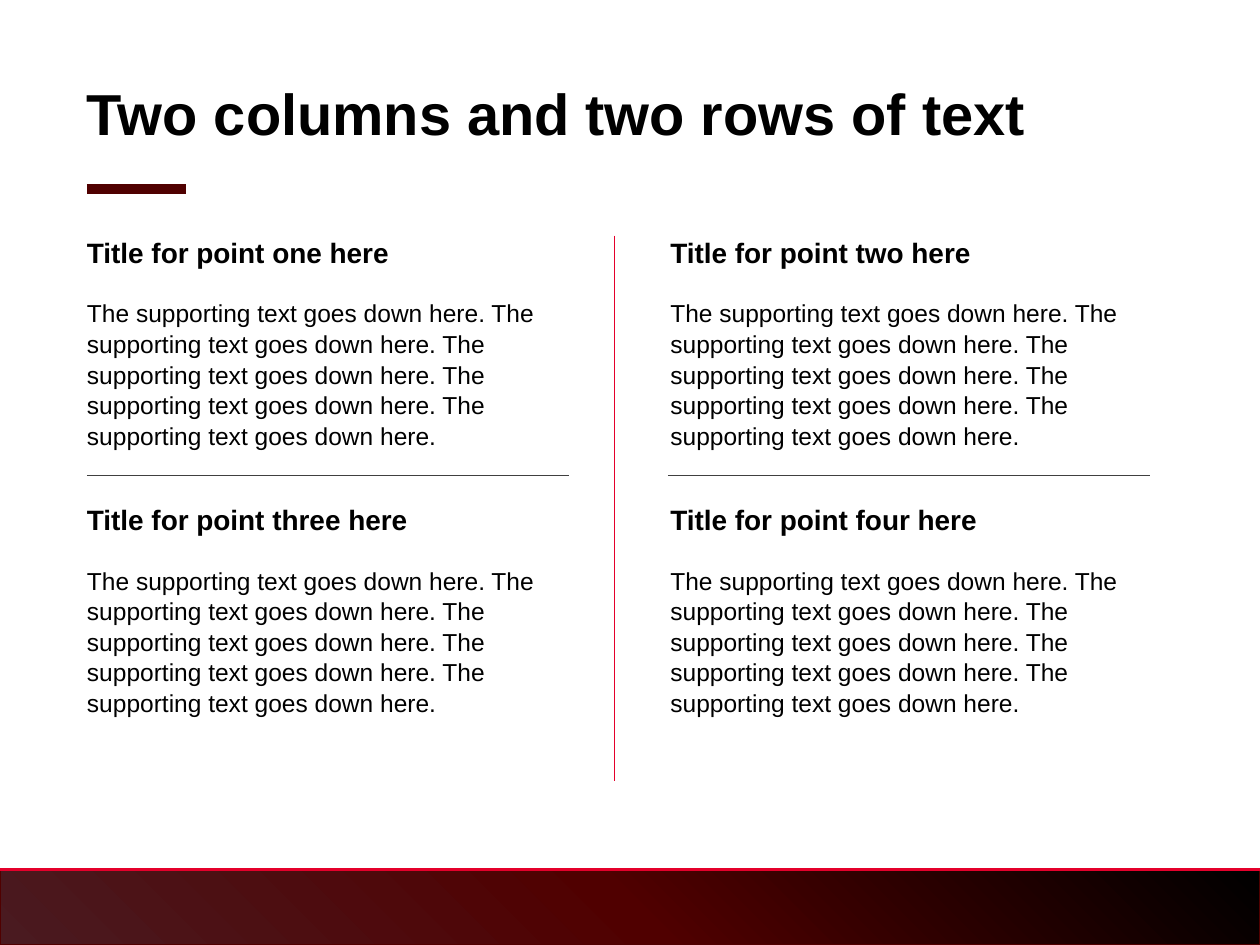
from pptx import Presentation
from pptx import util as u
from pptx.dml.color import RGBColor
from pptx.enum import shapes, text
from pptx.oxml import parse_xml
from pptx.oxml.ns import nsdecls
from lxml import etree

COLORS = {"ink": "000000", "maroon": "500000", "plum": "4A1A20", "red": "E4002B", "rule": "404040"}
TITLE = "Two columns and two rows of text"
SUPPORT = " ".join(["The supporting text goes down here."] * 5)
POINTS = [
    ["Title for point one here", "Title for point two here"],
    ["Title for point three here", "Title for point four here"],
]
FOOTER_STOPS = [(0, "ink"), (50, "maroon"), (100, "plum")]
LEFT, TOP = 0.69, 1.87
COLUMN_STEP, ROW_STEP = 4.63, 2.12
COLUMN_WIDTH = 4.02
RULES = [
    (LEFT, 1.5, 1.48, 1.5, "maroon", 6),
    (0, 6.9, 10, 6.9, "red", 1.5),
    (LEFT, 3.77, 4.52, 3.77, "rule", 0.5),
    (5.3, 3.77, 9.13, 3.77, "rule", 0.5),
    (4.88, TOP, 4.88, 6.2, "red", 0.5),
]


def rgb(name):
    return RGBColor.from_string(COLORS[name])


def write(holder, words, size, bold=False, spacing=1.0):
    frame = holder.text_frame
    frame.word_wrap = True
    frame.auto_size = text.MSO_AUTO_SIZE.NONE
    frame.vertical_anchor = text.MSO_ANCHOR.TOP
    frame.margin_left = frame.margin_top = frame.margin_right = frame.margin_bottom = 0
    paragraph = frame.paragraphs[0]
    paragraph.text = words
    paragraph.alignment = text.PP_ALIGN.LEFT
    paragraph.line_spacing = spacing
    paragraph.space_before = u.Pt(0)
    font = paragraph.font
    font.name, font.size, font.bold = "Arial", u.Pt(size), bold
    font.color.rgb = rgb("ink")


def add_text(slide, left, top, width, height, words, **style):
    write(slide.shapes.add_textbox(*map(u.Inches, (left, top, width, height))), words, **style)


def add_rule(slide, x1, y1, x2, y2, color, weight):
    rule = slide.shapes.add_connector(
        shapes.MSO_CONNECTOR.STRAIGHT, *map(u.Inches, (x1, y1, x2, y2)))
    rule.line.color.rgb = rgb(color)
    rule.line.width = u.Pt(weight)
    properties = rule._element.spPr
    etree.SubElement(properties, properties.tag.replace("presentationml", "drawingml").replace("spPr", "effectLst"))


def add_footer(slide):
    footer = slide.shapes.add_shape(
        shapes.MSO_SHAPE.RECTANGLE, *map(u.Inches, (0, 6.9, 10, 0.6)))
    footer.shadow.inherit = False
    footer.line.color.rgb = rgb("maroon")
    footer.line.width = u.Pt(1.5)
    stops = "".join(
        f'<a:gs pos="{place * 1000}"><a:srgbClr val="{COLORS[color]}"/></a:gs>'
        for place, color in FOOTER_STOPS)
    gradient = parse_xml(
        f'<a:gradFill {nsdecls("a")} rotWithShape="1"><a:gsLst>{stops}</a:gsLst>'
        '<a:lin ang="8100000" scaled="0"/></a:gradFill>')
    footer._element.spPr.prstGeom.addnext(gradient)


def main():
    deck = Presentation()
    deck.slide_width, deck.slide_height = u.Inches(10), u.Inches(7.5)
    slide = deck.slides.add_slide(deck.slide_layouts[5])

    title = slide.shapes.title
    title.left, title.top, title.width, title.height = map(u.Inches, (LEFT, 0.68, 8.62, 0.79))
    write(title, TITLE, size=33, bold=True, spacing=0.9)

    add_footer(slide)
    for rule in RULES:
        add_rule(slide, *rule)

    for row, headings in enumerate(POINTS):
        for column, heading in enumerate(headings):
            left, top = LEFT + column * COLUMN_STEP, TOP + row * ROW_STEP
            add_text(slide, left, top, COLUMN_WIDTH, 0.46, heading, size=16, bold=True)
            add_text(slide, left, top + 0.49, COLUMN_WIDTH, 1.15, SUPPORT, size=14, spacing=1.04)

    deck.save("out.pptx")


if __name__ == "__main__":
    main()
